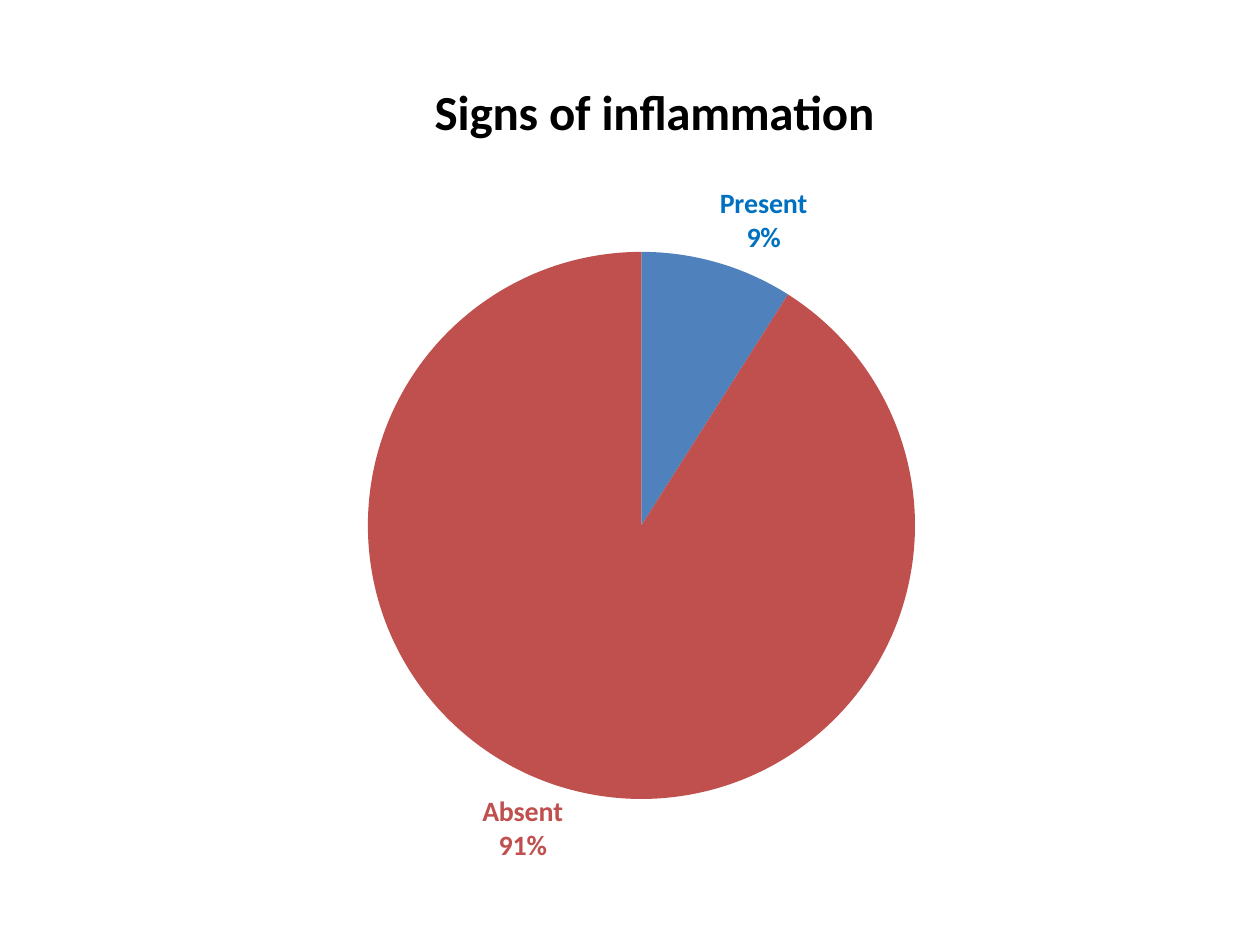
import lxml.etree
import pptx
import pptx.chart.data
import pptx.dml.color
import pptx.enum.chart
import pptx.oxml.ns
import pptx.util

Inches = pptx.util.Inches
Pt = pptx.util.Pt
RGB = pptx.dml.color.RGBColor.from_string
qn = pptx.oxml.ns.qn
theme = {
    "font": "Calibri", "ink": "000000", "title": 28, "label": 16, "base": 10,
    "fills": ["4F81BD", "C0504D"], "labels": ["0070C0", "C0504D"],
}


def style(font, size, color):
    font.name = theme["font"]
    font.size = Pt(size)
    font.bold = True
    font.color.rgb = RGB(color)


def place(parent, index, **values):
    for old in parent.findall(qn("c:layout")):
        parent.remove(old)
    layout = lxml.etree.Element(qn("c:layout"))
    parent.insert(index, layout)
    manual = lxml.etree.SubElement(layout, qn("c:manualLayout"))
    for name, value in values.items():
        lxml.etree.SubElement(manual, qn("c:" + name)).set("val", str(value))


deck = pptx.Presentation()
deck.slide_width = Inches(10)
deck.slide_height = Inches(7.5)
slide = deck.slides.add_slide(deck.slide_layouts[6])

data = pptx.chart.data.CategoryChartData()
data.categories = ["Present", "Absent"]
data.add_series("Series 1", [9, 91])
chart = slide.shapes.add_chart(
    pptx.enum.chart.XL_CHART_TYPE.PIE,
    Inches(0.42), Inches(0.42), Inches(9.25), Inches(6.58), data,
).chart
chart.has_legend = False
chart.font.name = theme["font"]
chart.font.size = Pt(theme["base"])
chart.font.color.rgb = RGB(theme["ink"])

chart.has_title = True
title = chart.chart_title
run = title.text_frame.paragraphs[0].add_run()
run.text = "Signs of inflammation"
style(run.font, theme["title"], theme["ink"])
place(title._element, 1, xMode="edge", yMode="edge", x=0.32, y=0.02)

plot = chart.plots[0]
plot.vary_by_categories = True
place(plot._element.getparent(), 0, layoutTarget="inner", xMode="edge",
      yMode="edge", x=0.27, y=0.24, w=0.47, h=0.66)

series = plot.series[0]
outside = pptx.enum.chart.XL_LABEL_POSITION.OUTSIDE_END
labels = series.data_labels
labels.number_format = "0%"
labels.number_format_is_linked = False
labels.show_value = False
labels.show_category_name = True
labels.show_percentage = True
labels.position = outside
style(labels.font, theme["label"], theme["fills"][0])

for i, (fill, ink) in enumerate(zip(theme["fills"], theme["labels"])):
    point = series.points[i]
    point.format.fill.solid()
    point.format.fill.fore_color.rgb = RGB(fill)
    point.format.line.fill.background()
    style(point.data_label.font, theme["label"], ink)
    point.data_label.position = outside

for label in labels._element.findall(qn("c:dLbl")):
    form = lxml.etree.Element(qn("c:numFmt"), formatCode="0%", sourceLinked="0")
    label.insert(1, form)
    for name, value in [("Val", "0"), ("CatName", "1"), ("Percent", "1")]:
        label.find(qn("c:show" + name)).set("val", value)
    lxml.etree.SubElement(label, qn("c:separator")).text = "\n"

deck.save("out.pptx")
